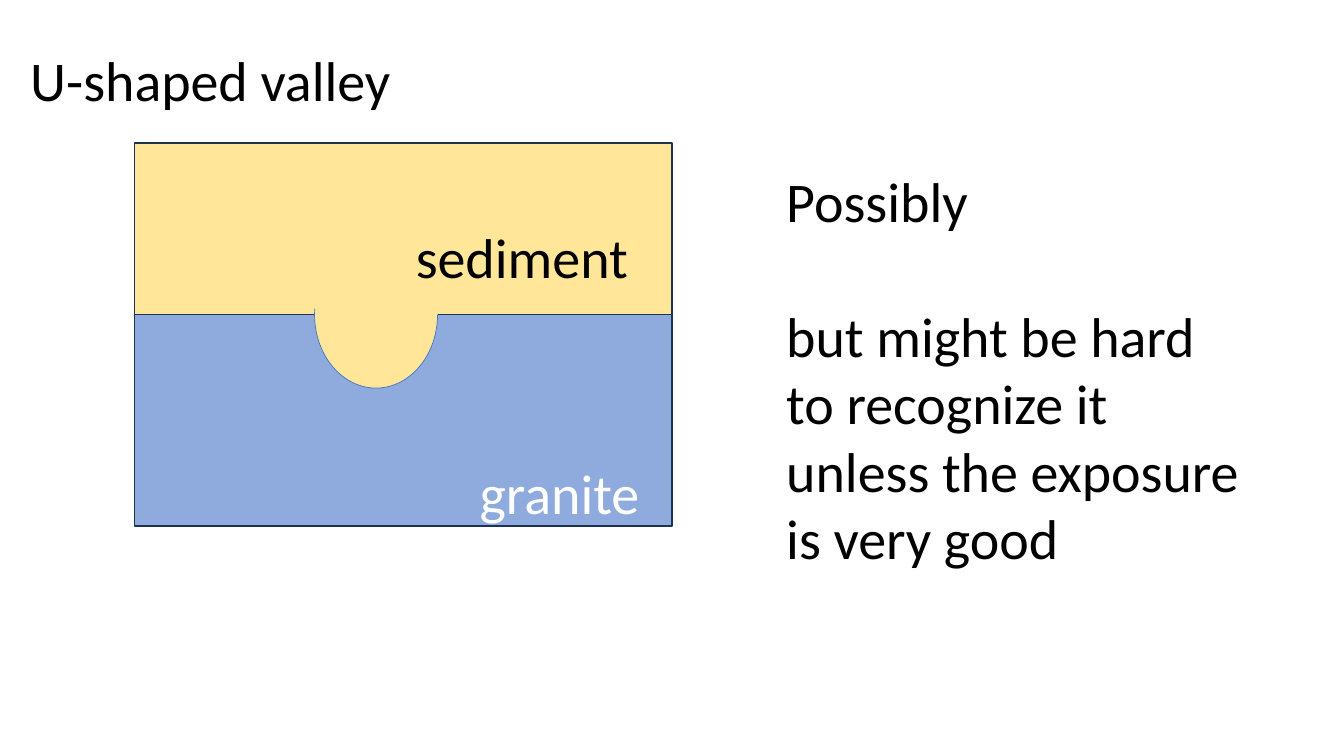
from dataclasses import dataclass

from lxml import etree
from pptx import Presentation
from pptx import util as u
from pptx.dml.color import RGBColor
from pptx.enum import shapes, text
from pptx.oxml import ns


@dataclass(frozen=True)
class Theme:
    font: str = "Calibri"
    size: float = 40
    line_height: float = 48.8
    ink: str = "000000"
    light: str = "FFFFFF"
    sediment: str = "FFE699"
    granite: str = "8FAADC"
    outline: str = "1E3256"
    valley_outline: str = "4472C4"


theme = Theme()
deck = Presentation()
deck.slide_width, deck.slide_height = u.Inches(13.33), u.Inches(7.5)


def share(*percents):
    sides = (deck.slide_width, deck.slide_height) * 2
    return [round(side * percent / 100) for side, percent in zip(sides, percents)]


def write(holder, lines, color, box):
    holder.left, holder.top, holder.width, holder.height = share(*box)
    frame = holder.text_frame
    frame.text = "\n".join(lines)
    frame.word_wrap = True
    frame.auto_size = text.MSO_AUTO_SIZE.NONE
    frame.vertical_anchor = text.MSO_ANCHOR.TOP
    for paragraph in frame.paragraphs:
        paragraph.alignment = text.PP_ALIGN.LEFT
        paragraph.space_before = u.Pt(0)
        font = paragraph.runs[0].font
        font.name, font.size = theme.font, u.Pt(theme.size)
        font.color.rgb = RGBColor.from_string(color)
    return frame.paragraphs


slide = deck.slides.add_slide(deck.slide_layouts[1])
write(slide.shapes.title, ["U-shaped valley"], theme.ink, (1.5, 5.33, 37.6, 10.27))

answer = write(
    slide.placeholders[1],
    ["Possibly", "but might be hard", "to recognize it", "unless the exposure", "is very good"],
    theme.ink,
    (57.75, 21.33, 37.6, 55.2),
)
for line in answer:
    properties = line._p.get_or_add_pPr()
    properties.set("marL", "0")
    properties.set("indent", "0")
    etree.SubElement(properties, ns.qn("a:buNone"))
answer[1].space_before = u.Pt(theme.line_height)

rectangle, arc = shapes.MSO_SHAPE.RECTANGLE, shapes.MSO_SHAPE.ARC
section = [
    (rectangle, (10, 41.6, 40, 28), theme.granite, theme.outline, 1),
    (rectangle, (10, 18.93, 40, 22.67), theme.sediment, theme.outline, 1),
    (arc, (22.5, 33.47, 10.95, 16.27), theme.sediment, theme.valley_outline, 0.5),
]
for kind, box, fill, outline, weight in section:
    layer = slide.shapes.add_shape(kind, *share(*box))
    layer.shadow.inherit = False
    layer.fill.solid()
    layer.fill.fore_color.rgb = RGBColor.from_string(fill)
    layer.line.color.rgb = RGBColor.from_string(outline)
    layer.line.width = u.Pt(weight)
    if kind == arc:
        layer.rotation = 90
        layer.adjustments[0], layer.adjustments[1] = 154.4, 64.14

corners = [share(*corner) for corner in [(20.33, 36), (28.73, 49.07), (34.88, 37.07), (21.38, 37.07)]]
outline = slide.shapes.build_freeform(*corners[0])
outline.add_line_segments(corners[1:], close=True)
valley_fill = outline.convert_to_shape()
valley_fill.shadow.inherit = False
valley_fill.fill.solid()
valley_fill.fill.fore_color.rgb = RGBColor.from_string(theme.sediment)
valley_fill.line.fill.background()

rock_labels = [
    ("sediment", theme.ink, (30.2, 28.8, 27.2, 10.27)),
    ("granite", theme.light, (34.95, 60, 15, 10.27)),
]
for rock, color, box in rock_labels:
    write(slide.shapes.add_textbox(*share(*box)), [rock], color, box)

deck.save("out.pptx")
